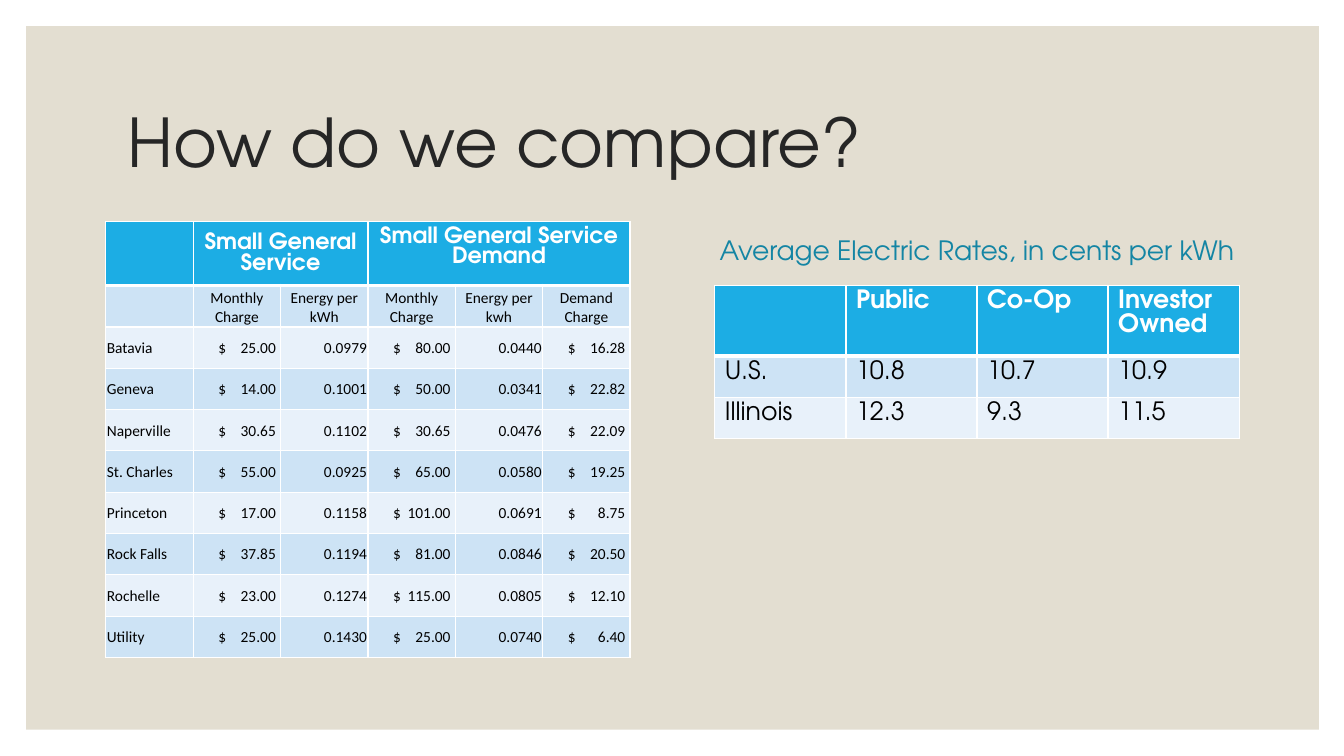
from lxml import etree
from pptx import Presentation
from pptx.dml.color import RGBColor
from pptx.enum import shapes, text
from pptx.oxml import ns
from pptx.util import Inches, Pt

# Content
TITLE = "How do we compare?"
RATES = "Average Electric Rates, in cents per kWh"
GROUPS = [("Small General Service", 1, 2), ("Small General Service Demand", 3, 5)]
HEADS = ["", "Monthly Charge", "Energy per kWh", "Monthly Charge",
         "Energy per kwh", "Demand Charge"]
TOWNS = [
    ("Batavia", "25.00", "0.0979", "80.00", "0.0440", "16.28"),
    ("Geneva", "14.00", "0.1001", "50.00", "0.0341", "22.82"),
    ("Naperville", "30.65", "0.1102", "30.65", "0.0476", "22.09"),
    ("St. Charles", "55.00", "0.0925", "65.00", "0.0580", "19.25"),
    ("Princeton", "17.00", "0.1158", "101.00", "0.0691", "8.75"),
    ("Rock Falls", "37.85", "0.1194", "81.00", "0.0846", "20.50"),
    ("Rochelle", "23.00", "0.1274", "115.00", "0.0805", "12.10"),
    ("Utility", "25.00", "0.1430", "25.00", "0.0740", "6.40"),
]
MONEY = (1, 3, 5)
OWNERS = [
    ("", "Public", "Co-Op", "Investor Owned"),
    ("U.S.", "10.8", "10.7", "10.9"),
    ("Illinois", "12.3", "9.3", "11.5"),
]

# Look
SANS, BODY = "TeX Gyre Adventor", "Calibri"
BLUE, BANDS, WHITE = "1CADE4", ("CDE3F5", "E8F1FA"), "FFFFFF"
LEFT, MID, RIGHT = text.PP_ALIGN.LEFT, text.PP_ALIGN.CENTER, text.PP_ALIGN.RIGHT
TOP, CENTER, LOW = (text.MSO_ANCHOR.TOP, text.MSO_ANCHOR.MIDDLE,
                    text.MSO_ANCHOR.BOTTOM)
ROW = 0.41


def color(code):
    return RGBColor.from_string(code)


def write(frame, words, size=18, font=SANS, ink="000000", bold=False,
          align=LEFT, space=None, tab=None):
    para = frame.paragraphs[0]
    if tab:
        stops = etree.SubElement(para._p.get_or_add_pPr(), ns.qn("a:tabLst"))
        etree.SubElement(stops, ns.qn("a:tab"), pos=str(Inches(tab)), algn="r")
    para.alignment = align
    if space:
        para.line_spacing = space
    run = para.add_run()
    run.text = words
    run.font.size, run.font.name, run.font.bold = Pt(size), font, bold
    run.font.color.rgb = color(ink)


def label(box, words, **look):
    frame = slide.shapes.add_textbox(*map(Inches, box)).text_frame
    frame.word_wrap = True
    frame.vertical_anchor = CENTER
    write(frame, words, **look)


def border(cell, row):
    props = cell._tc.get_or_add_tcPr()
    for side in "LRTB":
        thick = (row, side) in ((0, "B"), (1, "T"))
        line = etree.SubElement(props, ns.qn("a:ln" + side),
                                w=str(Pt(3 if thick else 1)))
        fill = etree.SubElement(line, ns.qn("a:solidFill"))
        etree.SubElement(fill, ns.qn("a:srgbClr"), val=WHITE)


def grid(left, top, rows, cols, wide):
    frame = slide.shapes.add_table(rows, cols, Inches(left), Inches(top),
                                   Inches(wide), Inches(ROW * rows))
    table = frame.table
    table.first_row = table.horz_banding = False
    for col in table.columns:
        col.width = Inches(wide / cols)
    for r, row in enumerate(table.rows):
        row.height = Inches(ROW)
        for cell in row.cells:
            border(cell, r)
            cell.fill.solid()
            cell.fill.fore_color.rgb = color(BANDS[(r - 1) % 2] if r else BLUE)
    return table


def small(cell, words, anchor, inset=0.01, **look):
    cell.margin_left, cell.margin_right = Inches(inset), Inches(0.01)
    cell.margin_top, cell.margin_bottom = Inches(0.01), 0
    cell.vertical_anchor = anchor
    write(cell.text_frame, words, size=11, font=BODY, **look)


# Slide and backdrop
deck = Presentation()
deck.slide_width, deck.slide_height = Inches(13.33), Inches(7.5)
slide = deck.slides.add_slide(deck.slide_layouts[6])
panel = slide.shapes.add_shape(shapes.MSO_SHAPE.RECTANGLE, Inches(0.26),
                               Inches(0.26), Inches(12.82), Inches(6.98))
panel.shadow.inherit = False
panel.fill.solid()
panel.fill.fore_color.rgb = color("E3DED1")
panel.line.fill.background()

# Headings
label((1.17, 0.7, 11, 1.5), TITLE, size=48, ink="262626", space=0.9)
label((6.95, 2.13, 5.48, 0.7), RATES, size=19, ink="1485A4", align=MID)

# Rates by kind of owner
owners = grid(7.09, 2.83, len(OWNERS), len(OWNERS[0]), 5.2)
for r, row in enumerate(OWNERS):
    for c, words in enumerate(row):
        if words:
            write(owners.cell(r, c).text_frame, words, bold=r == 0,
                  ink="000000" if r else WHITE)

# Rates by town
towns = grid(1.05, 2.2, len(TOWNS) + 2, len(HEADS), 5.2)
for words, first, last in GROUPS:
    cell = towns.cell(0, first)
    cell.merge(towns.cell(0, last))
    cell.vertical_anchor = CENTER if first == 1 else TOP
    write(cell.text_frame, words, size=16, ink=WHITE, bold=True, align=MID)
for c, words in enumerate(HEADS):
    if words:
        small(towns.cell(1, c), words, LOW, align=MID)
for r, row in enumerate(TOWNS, 2):
    for c, words in enumerate(row):
        cell = towns.cell(r, c)
        if c in MONEY:
            small(cell, "$\t" + words, CENTER, inset=0.25, tab=0.57)
        else:
            small(cell, words, CENTER, align=RIGHT if c else LEFT)

deck.save("out.pptx")
